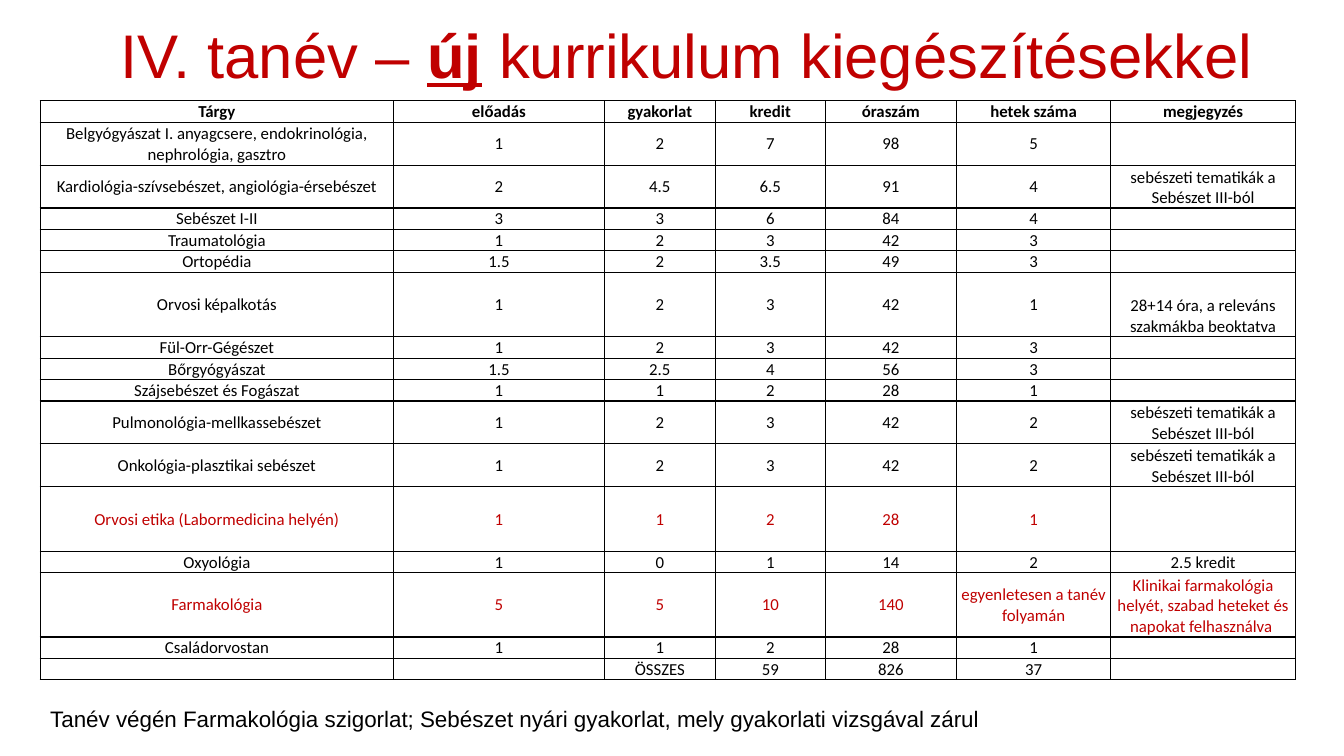
from dataclasses import dataclass

from lxml import etree
from pptx import Presentation
from pptx.dml.color import RGBColor
from pptx.enum import text
from pptx.oxml import ns
from pptx.util import Inches, Pt


@dataclass(frozen=True)
class Theme:
    """Colours, fonts and type sizes of the slide."""
    ink: str = "000000"
    accent: str = "C00000"
    heading_font: str = "Arial"
    table_font: str = "Calibri"
    title_size: int = 44
    footnote_size: int = 16
    table_size: int = 12
    border_width: int = 1


THEME = Theme()
SURGERY_NOTE = "sebészeti tematikák a Sebészet III-ból"
HEADINGS = ("Tárgy", "előadás", "gyakorlat", "kredit", "óraszám", "hetek száma", "megjegyzés")
SUBJECTS = (
    ("Belgyógyászat I. anyagcsere, endokrinológia, nephrológia, gasztro", "1", "2", "7", "98", "5", ""),
    ("Kardiológia-szívsebészet, angiológia-érsebészet", "2", "4.5", "6.5", "91", "4", SURGERY_NOTE),
    ("Sebészet I-II", "3", "3", "6", "84", "4", ""),
    ("Traumatológia", "1", "2", "3", "42", "3", ""),
    ("Ortopédia", "1.5", "2", "3.5", "49", "3", ""),
    ("Orvosi képalkotás", "1", "2", "3", "42", "1", "28+14 óra, a releváns szakmákba beoktatva"),
    ("Fül-Orr-Gégészet", "1", "2", "3", "42", "3", ""),
    ("Bőrgyógyászat", "1.5", "2.5", "4", "56", "3", ""),
    ("Szájsebészet és Fogászat", "1", "1", "2", "28", "1", ""),
    ("Pulmonológia-mellkassebészet", "1", "2", "3", "42", "2", SURGERY_NOTE),
    ("Onkológia-plasztikai sebészet", "1", "2", "3", "42", "2", SURGERY_NOTE),
    ("Orvosi etika (Labormedicina helyén)", "1", "1", "2", "28", "1", ""),
    ("Oxyológia", "1", "0", "1", "14", "2", "2.5 kredit"),
    ("Farmakológia", "5", "5", "10", "140", "egyenletesen a tanév folyamán",
     "Klinikai farmakológia helyét, szabad heteket és napokat felhasználva\u00a0"),
    ("Családorvostan", "1", "1", "2", "28", "1", ""),
    ("", "", "ÖSSZES", "59", "826", "37", ""),
)
CHANGED_SUBJECTS = {"Orvosi etika (Labormedicina helyén)", "Farmakológia"}
COLUMN_SHARES = (3.5, 2.09, 1.1, 1.09, 1.3, 1.53, 1.83)
ROW_LINES = (1, 2, 2, 1, 1, 1, 3, 1, 1, 1, 2, 2, 3, 1, 3, 1, 1)


def set_font(paragraph, name, size, colour, bold=False):
    """Give a whole paragraph one font."""
    font = paragraph.font
    font.name, font.size, font.bold = name, Pt(size), bold
    font.color.rgb = RGBColor.from_string(colour)


def add_title(slide, left, top, width, height):
    """Place the centred heading with its emphasised word."""
    frame = slide.shapes.add_textbox(left, top, width, height).text_frame
    frame.word_wrap = True
    frame.vertical_anchor = text.MSO_ANCHOR.MIDDLE
    heading = frame.paragraphs[0]
    heading.alignment = text.PP_ALIGN.CENTER
    heading.line_spacing = 0.9
    set_font(heading, THEME.heading_font, THEME.title_size, THEME.accent)
    for words in (" IV. tanév – ", "új", " kurrikulum kiegészítésekkel"):
        run = heading.add_run()
        run.text = words
        if words == "új":
            run.font.bold = run.font.underline = True


def add_borders(cell):
    """Draw a thin line on all four sides of a cell."""
    properties = cell._tc.get_or_add_tcPr()
    for side in ("lnL", "lnR", "lnT", "lnB"):
        line = etree.SubElement(properties, ns.qn(f"a:{side}"), w=str(Pt(THEME.border_width)))
        fill = etree.SubElement(line, ns.qn("a:solidFill"))
        etree.SubElement(fill, ns.qn("a:srgbClr"), val=THEME.ink)


def fill_cell(cell, words, colour, bold, anchor):
    """Write and format one table cell."""
    cell.margin_left = cell.margin_right = cell.margin_top = Inches(0.01)
    cell.margin_bottom = 0
    cell.vertical_anchor = anchor
    add_borders(cell)
    cell.fill.background()
    cell.text = words
    paragraph = cell.text_frame.paragraphs[0]
    paragraph.alignment = text.PP_ALIGN.CENTER
    set_font(paragraph, THEME.table_font, THEME.table_size, colour, bold)


def add_curriculum(slide, left, top, width, height):
    """Place the table of subjects, sharing out the box by columns and text lines."""
    rows = (HEADINGS, *SUBJECTS)
    table = slide.shapes.add_table(len(rows), len(HEADINGS), left, top, width, height).table
    table.horz_banding = table.first_row = False
    for column, share in zip(table.columns, COLUMN_SHARES):
        column.width = int(width * share / sum(COLUMN_SHARES))
    for row, lines in zip(table.rows, ROW_LINES):
        row.height = int(height * lines / sum(ROW_LINES))
    for r, values in enumerate(rows):
        colour = THEME.accent if values[0] in CHANGED_SUBJECTS else THEME.ink
        for c, words in enumerate(values):
            is_note = r > 0 and c == len(HEADINGS) - 1
            anchor = text.MSO_ANCHOR.BOTTOM if is_note else text.MSO_ANCHOR.MIDDLE
            fill_cell(table.cell(r, c), words, colour, r == 0, anchor)


def add_footnote(slide, left, top, width, height):
    """Place the remark on examinations."""
    frame = slide.shapes.add_textbox(left, top, width, height).text_frame
    frame.word_wrap = False
    frame.auto_size = text.MSO_AUTO_SIZE.SHAPE_TO_FIT_TEXT
    remark = frame.paragraphs[0]
    remark.text = ("Tanév végén Farmakológia szigorlat; Sebészet nyári gyakorlat, "
                   "mely gyakorlati vizsgával zárul")
    set_font(remark, THEME.heading_font, THEME.footnote_size, THEME.ink)


def main():
    """Build and save the curriculum slide."""
    deck = Presentation()
    deck.slide_width, deck.slide_height = Inches(13.33), Inches(7.5)
    slide = deck.slides.add_slide(deck.slide_layouts[6])
    margin = Inches(0.4)
    add_footnote(slide, margin, Inches(6.95), Inches(9.46), Inches(0.37))
    add_title(slide, margin, Inches(0.19), Inches(12.66), Inches(0.78))
    add_curriculum(slide, margin, Inches(1), Inches(12.45), Inches(5.75))
    deck.save("out.pptx")


if __name__ == "__main__":
    main()
